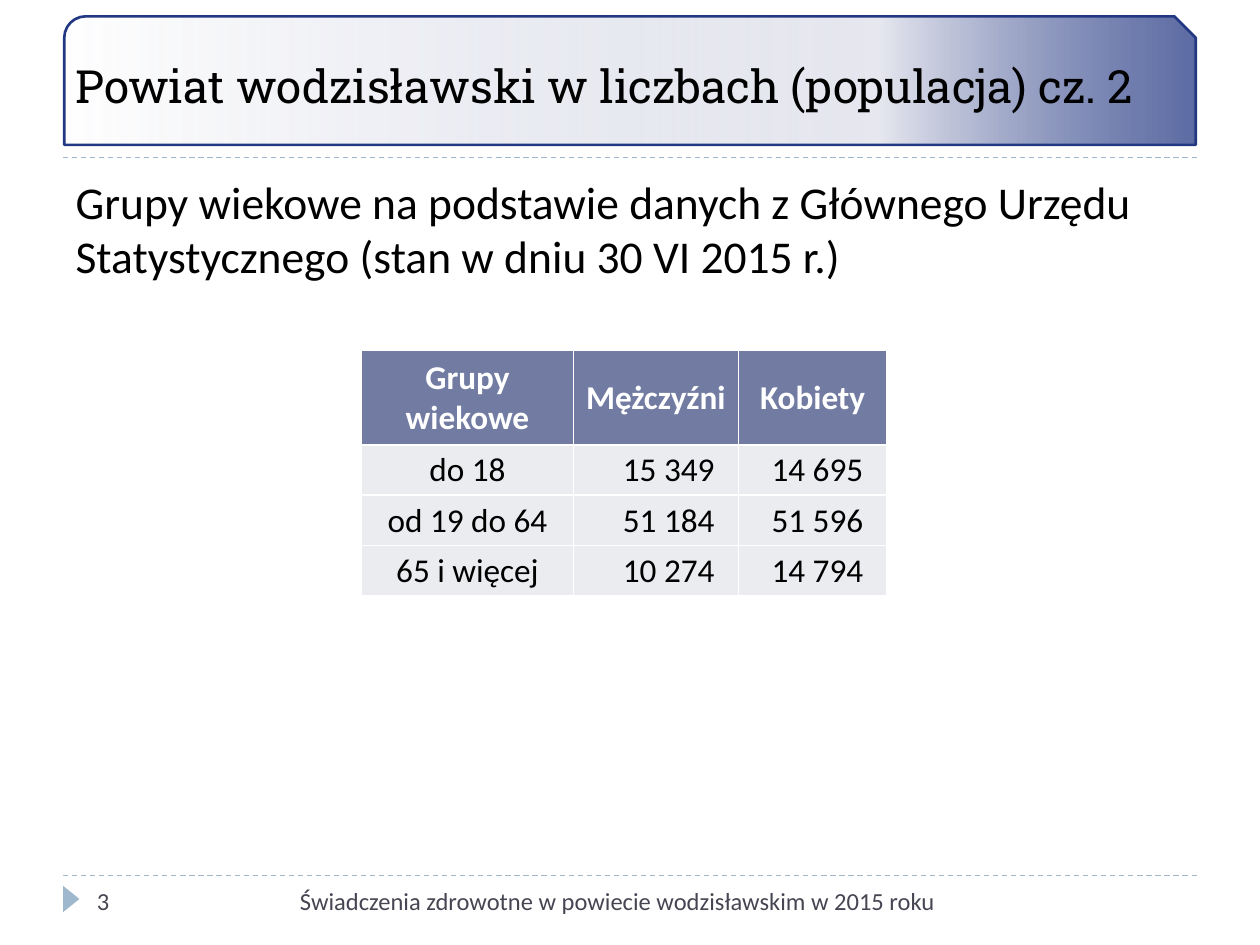
import pptx
import pptx.util
import pptx.oxml
import pptx.oxml.ns
import pptx.dml.color
import pptx.enum.dml
import pptx.enum.shapes
import pptx.enum.text

Inches, Pt = pptx.util.Inches, pptx.util.Pt
Shape = pptx.enum.shapes.MSO_SHAPE
Align = pptx.enum.text.PP_ALIGN
Anchor = pptx.enum.text.MSO_ANCHOR
NS = pptx.oxml.ns.nsdecls("a")
HUES = {"navy": "233883", "mist": "E6E7EF", "haze": "CCD0E0", "sky": "9FB8CD",
        "head": "727CA3", "row": "EBECF0", "white": "FFFFFF",
        "black": "000000", "gray": "464653"}


def hue(name):
    return pptx.dml.color.RGBColor.from_string(HUES[name])


def write(frame, text, size=14, color="gray", font="Calibri", bold=False,
          align=Align.LEFT, anchor=Anchor.TOP, before=0):
    frame.word_wrap = True
    frame.vertical_anchor = anchor
    para = frame.paragraphs[0]
    para.alignment = align
    para.space_before = Pt(before)
    run = para.add_run()
    run.text = text
    run.font.name = font
    run.font.size = Pt(size)
    run.font.bold = bold
    run.font.color.rgb = hue(color)
    return para


deck = pptx.Presentation()
deck.slide_width, deck.slide_height = Inches(10), Inches(7.5)
slide = deck.slides.add_slide(deck.slide_layouts[1])
shapes = slide.shapes
title, body = shapes.title, slide.placeholders[1]

for y in (6.95, 1.25):
    rule = shapes.add_connector(pptx.enum.shapes.MSO_CONNECTOR.STRAIGHT,
                                Inches(0.5), Inches(y), Inches(9.5), Inches(y))
    rule.line.color.rgb = hue("sky")
    rule.line.width = Pt(0.75)
    rule.line.dash_style = pptx.enum.dml.MSO_LINE.DASH
    rule._element.spPr.append(pptx.oxml.parse_xml(f"<a:effectLst {NS}/>"))

mark = shapes.add_shape(Shape.ISOSCELES_TRIANGLE, Inches(0.46), Inches(7.07),
                        Inches(0.21), Inches(0.13))
mark.rotation = 90
mark.shadow.inherit = False
mark.fill.solid()
mark.fill.fore_color.rgb = hue("sky")
mark.line.fill.background()

band = shapes.add_shape(Shape.SNIP_ROUND_RECTANGLE, Inches(0.51), Inches(0.13),
                        Inches(8.98), Inches(1.02))
band.shadow.inherit = False
band.line.color.rgb = hue("navy")
band.line.width = Pt(1.5)
band.fill.gradient()
band.fill.gradient_angle = 180
stops = band._element.spPr.find(".//" + pptx.oxml.ns.qn("a:gsLst"))
for stop in list(stops):
    stops.remove(stop)
for pos, name, alpha in ((0, "navy", 73), (28, "mist", 100), (100, "haze", 0)):
    stops.append(pptx.oxml.parse_xml(
        f'<a:gs {NS} pos="{pos * 1000}"><a:srgbClr val="{HUES[name]}">'
        f'<a:alpha val="{alpha * 1000}"/></a:srgbClr></a:gs>'))

for holder, top, high in ((title, 0.35, 0.65), (body, 1.33, 5.4)):
    holder.left, holder.top = Inches(0.5), Inches(top)
    holder.width, holder.height = Inches(9), Inches(high)
    holder.text_frame.auto_size = pptx.enum.text.MSO_AUTO_SIZE.NONE
    shapes._spTree.append(holder._element)

write(title.text_frame, "Powiat wodzisławski w liczbach (populacja) cz. 2",
      size=26.1, color="black", font="Roboto Slab", anchor=Anchor.MIDDLE)
intro = write(body.text_frame, "Grupy wiekowe na podstawie danych z Głównego Urzędu "
              "Statystycznego (stan w dniu 30 VI 2015 r.)",
              size=26, color="black", before=6)
props = intro._p.get_or_add_pPr()
props.set("marL", "0")
props.set("indent", "0")
props.append(pptx.oxml.parse_xml(f"<a:buNone {NS}/>"))

for x, wide, text, align in (
        (0.67, 2.17, "3", Align.LEFT),
        (2.17, 5.35, "Świadczenia zdrowotne w powiecie wodzisławskim w 2015 roku",
         Align.RIGHT)):
    box = shapes.add_textbox(Inches(x), Inches(6.98), Inches(wide), Inches(0.4))
    write(box.text_frame, text, align=align)

data = (("Grupy wiekowe", "Mężczyźni", "Kobiety"),
        ("do 18", "15 349", "14 695"),
        ("od 19 do 64", "51 184", "51 596"),
        ("65 i więcej", "10 274", "14 794"))
table = shapes.add_table(4, 3, Inches(2.87), Inches(2.78),
                         Inches(4.17), Inches(1.95)).table
for col, wide in zip(table.columns, (1.68, 1.31, 1.18)):
    col.width = Inches(wide)
for row, high in zip(table.rows, (0.75, 0.4, 0.4, 0.4)):
    row.height = Inches(high)
for r, line in enumerate(data):
    for c, text in enumerate(line):
        cell = table.cell(r, c)
        head, count = r == 0, r > 0 and c > 0
        cell.margin_left = cell.margin_top = Inches(0.01)
        cell.margin_right = Inches(0.19 if count else 0.01)
        cell.margin_bottom = 0
        cell.vertical_anchor = Anchor.MIDDLE
        for side in "LRTB":
            cell._tc.get_or_add_tcPr().append(pptx.oxml.parse_xml(
                f'<a:ln{side} {NS} w="12700"><a:solidFill>'
                f'<a:srgbClr val="{HUES["white"]}"/></a:solidFill></a:ln{side}>'))
        cell.fill.solid()
        cell.fill.fore_color.rgb = hue("head" if head else "row")
        write(cell.text_frame, text, size=19, bold=head,
              color="white" if head else "black", anchor=None,
              align=Align.RIGHT if count else Align.CENTER)

deck.save("out.pptx")
